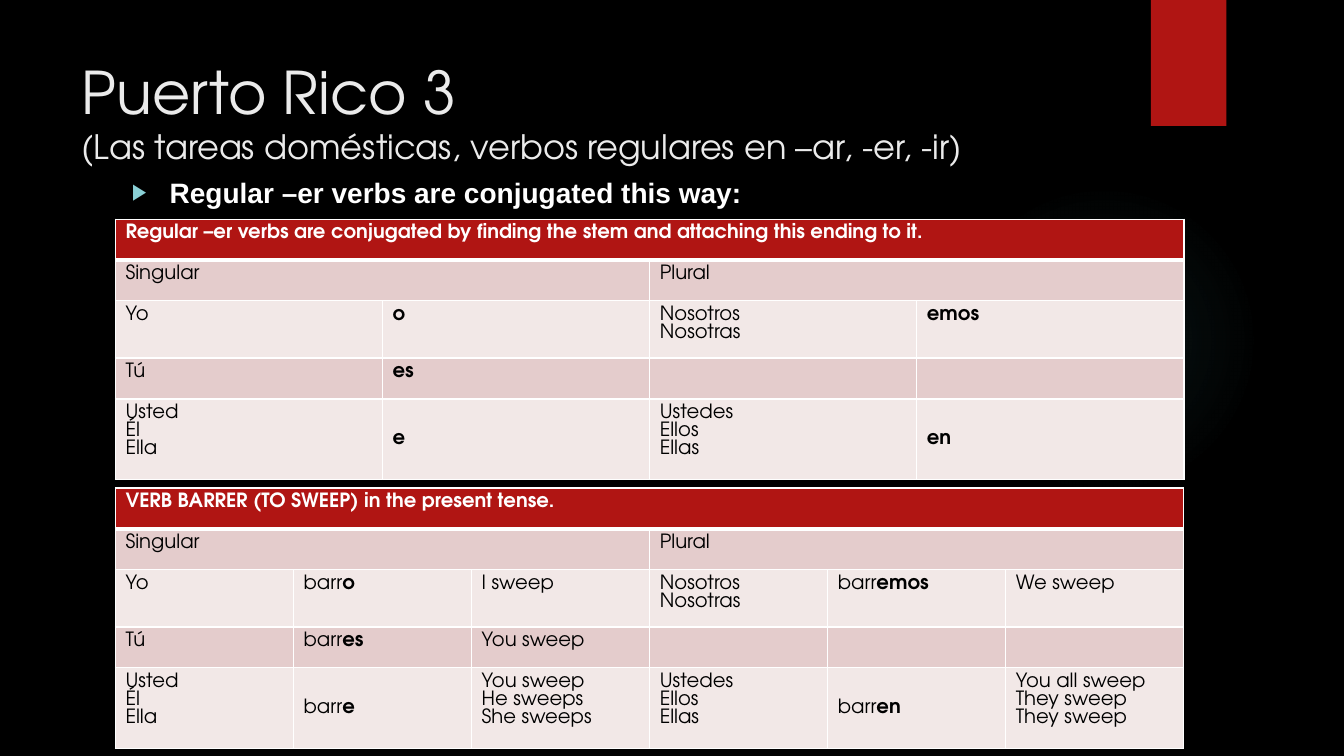
import pptx
import pptx.dml.color
import pptx.enum.shapes
import pptx.enum.text
import pptx.oxml
import pptx.oxml.ns
import pptx.util

Pt = pptx.util.Pt
RGBColor = pptx.dml.color.RGBColor
Anchor = pptx.enum.text.MSO_ANCHOR
Shape = pptx.enum.shapes.MSO_SHAPE

TITLE = "Puerto Rico 3"
SUBTITLE = "(Las tareas domésticas, verbos regulares en –ar, -er, -ir)"
BULLET = "Regular –er verbs are conjugated this way:"
US, THEY = "Usted\nÉl\nElla", "Ustedes\nEllos\nEllas"
WE = "Nosotros\nNosotras"

ENDINGS = {
    "top": 156.5,
    "heading": "Regular –er verbs are conjugated by finding the stem and attaching this ending to it.",
    "rows": [
        [("Yo", ""), ("", "o"), (WE, ""), ("", "emos")],
        [("Tú", ""), ("", "es"), ("", ""), ("", "")],
        [(US, ""), ("", "e"), (THEY, ""), ("", "en")],
    ],
}
BARRER = {
    "top": 348.6,
    "heading": "VERB BARRER (TO SWEEP) in the present tense.",
    "rows": [
        [("Yo", ""), ("barr", "o"), ("I sweep", ""),
         (WE, ""), ("barr", "emos"), ("We sweep", "")],
        [("Tú", ""), ("barr", "es"), ("You sweep", ""), ("", ""), ("", ""), ("", "")],
        [(US, ""), ("barr", "e"), ("You sweep\nHe sweeps\nShe sweeps", ""),
         (THEY, ""), ("barr", "en"), ("You all sweep\nThey sweep\nThey sweep", "")],
    ],
}

TABLE_LEFT, TABLE_WIDTH, ROW_HEIGHT = 82.5, 763.2, 29.2
TITLE_FONT, BODY_FONT = "TeX Gyre Adventor", "Arial"
BLACK = RGBColor(0x00, 0x00, 0x00)
WHITE = RGBColor(0xFF, 0xFF, 0xFF)
RED = RGBColor(0xB0, 0x15, 0x13)
PALE = RGBColor(0xEB, 0xEB, 0xEB)
DARK_BAND = RGBColor(0xE4, 0xCC, 0xCC)
LIGHT_BAND = RGBColor(0xF2, 0xE8, 0xE7)
AQUA = RGBColor(0x8A, 0xD0, 0xD6)
GLOW = RGBColor(0x50, 0xB9, 0xC1)
GLOW_STOPS = [(0, 7), (36, 6), (69, 0)]
NAMESPACE = pptx.oxml.ns.nsdecls("a")


def add_plain_shape(page, kind, left, top, width, height):
    shape = page.shapes.add_shape(kind, Pt(left), Pt(top), Pt(width), Pt(height))
    shape.shadow.inherit = False
    shape.line.fill.background()
    return shape


def add_glow(page):
    glow = add_plain_shape(page, Shape.OVAL, 677.5, 131.8, 221.8, 221.8)
    stops = "".join(
        f'<a:gs pos="{place * 1000}"><a:srgbClr val="{GLOW}">'
        f'<a:alpha val="{alpha * 1000}"/></a:srgbClr></a:gs>'
        for place, alpha in GLOW_STOPS)
    gradient = pptx.oxml.parse_xml(
        f'<a:gradFill {NAMESPACE} rotWithShape="1"><a:gsLst>{stops}</a:gsLst>'
        '<a:path path="circle"><a:fillToRect l="50000" t="50000" r="50000" b="50000"/>'
        '</a:path></a:gradFill>')
    glow._element.spPr.find(pptx.oxml.ns.qn("a:prstGeom")).addnext(gradient)


def add_text_box(page, left, top, width, height):
    frame = page.shapes.add_textbox(Pt(left), Pt(top), Pt(width), Pt(height)).text_frame
    frame.word_wrap = True
    return frame.paragraphs[0]


def add_title(page):
    para = add_text_box(page, 51.1, 36, 740.9, 110.2)
    para.font.name, para.font.color.rgb = TITLE_FONT, PALE
    for text, size in [(TITLE, 42), (SUBTITLE, 24)]:
        if para.runs:
            para.add_line_break()
        span = para.add_run()
        span.text, span.font.size = text, Pt(size)


def add_bullet(page):
    para = add_text_box(page, 87.1, 121.7, 704.2, 346.3)
    para.text = BULLET
    settings = para._p.get_or_add_pPr()
    settings.set("marL", str(Pt(27)))
    settings.set("indent", str(-Pt(27)))
    for xml in [f'<a:buClr {NAMESPACE}><a:srgbClr val="{AQUA}"/></a:buClr>',
                f'<a:buSzPct {NAMESPACE} val="80000"/>',
                f'<a:buFont {NAMESPACE} typeface="{BODY_FONT}"/>',
                f'<a:buChar {NAMESPACE} char="▶"/>']:
        settings.append(pptx.oxml.parse_xml(xml))
    para.font.name, para.font.size, para.font.bold = BODY_FONT, Pt(20), True
    para.font.color.rgb = WHITE


def style_cell(cell, fill, bottom=1):
    settings = cell._tc.get_or_add_tcPr()
    for side, width in [("L", 1), ("R", 1), ("T", 1), ("B", bottom)]:
        settings.append(pptx.oxml.parse_xml(
            f'<a:ln{side} {NAMESPACE} w="{Pt(width)}"><a:solidFill>'
            f'<a:srgbClr val="{WHITE}"/></a:solidFill></a:ln{side}>'))
    cell.fill.solid()
    cell.fill.fore_color.rgb = fill


def write_cell(cell, stem, ending, color):
    frame = cell.text_frame
    for index, line in enumerate(stem.split("\n")):
        para = frame.add_paragraph() if index else frame.paragraphs[0]
        para.font.name, para.font.size = TITLE_FONT, Pt(14)
        para.font.color.rgb = color
        for text, bold in [(line, False), (ending, True)]:
            if text:
                span = para.add_run()
                span.text, span.font.bold = text, bold


def add_verb_table(page, content):
    columns = len(content["rows"][0])
    half = columns // 2
    blank = ("", "")
    header = [("", content["heading"])] + [blank] * (columns - 1)
    numbers = [("Singular", "")] + [blank] * (half - 1)
    numbers += [("Plural", "")] + [blank] * (half - 1)
    rows = [header, numbers] + content["rows"]
    table = page.shapes.add_table(
        len(rows), columns, Pt(TABLE_LEFT), Pt(content["top"]),
        Pt(TABLE_WIDTH), Pt(ROW_HEIGHT * len(rows))).table
    for column in table.columns:
        column.width = Pt(TABLE_WIDTH / columns)
    for r, row in enumerate(rows):
        table.rows[r].height = Pt(ROW_HEIGHT)
        fill = RED if r == 0 else DARK_BAND if r % 2 else LIGHT_BAND
        for c, (stem, ending) in enumerate(row):
            cell = table.cell(r, c)
            style_cell(cell, fill, 3 if r == 0 else 1)
            write_cell(cell, stem, ending, WHITE if r == 0 else BLACK)
            if r == len(rows) - 1 and ending:
                cell.vertical_anchor = Anchor.MIDDLE
    table.cell(0, 0).merge(table.cell(0, columns - 1))
    for first in (0, half):
        table.cell(1, first).merge(table.cell(1, first + half - 1))


def main():
    deck = pptx.Presentation()
    deck.slide_width, deck.slide_height = Pt(960), Pt(540)
    page = deck.slides.add_slide(deck.slide_layouts[6])
    page.background.fill.solid()
    page.background.fill.fore_color.rgb = BLACK
    add_glow(page)
    ribbon = add_plain_shape(page, Shape.RECTANGLE, 822, 0, 54, 90)
    ribbon.fill.solid()
    ribbon.fill.fore_color.rgb = RED
    add_title(page)
    add_bullet(page)
    for content in (BARRER, ENDINGS):
        add_verb_table(page, content)
    deck.save("out.pptx")


if __name__ == "__main__":
    main()
